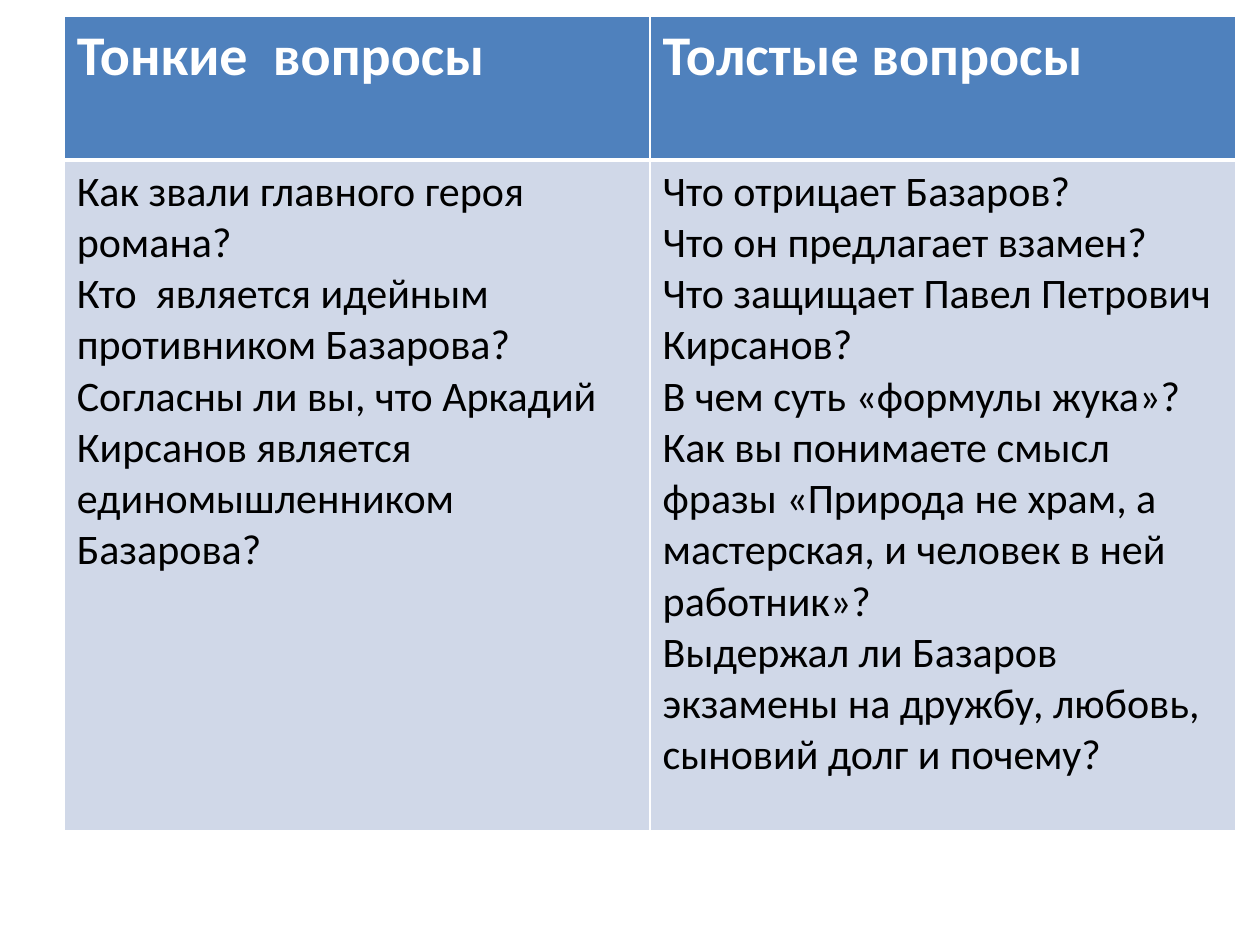
from lxml.etree import SubElement as Sub
from pptx import Presentation
from pptx.dml.color import RGBColor as Rgb
from pptx.oxml.ns import qn
from pptx.util import Inches, Pt

HEADS = ["Тонкие  вопросы", "Толстые вопросы"]
THIN = [
    "Как звали главного героя романа?",
    "Кто  является идейным противником Базарова?",
    "Согласны ли вы, что Аркадий Кирсанов является единомышленником Базарова?",
]
THICK = [
    "Что отрицает Базаров?",
    "Что он предлагает взамен?",
    "Что защищает Павел Петрович Кирсанов?",
    "В чем суть «формулы жука»?",
    "Как вы понимаете смысл фразы «Природа не храм, а мастерская, и человек в ней работник»?",
    "Выдержал ли Базаров экзамены на дружбу, любовь, сыновий долг и почему?",
]


def color(code):
    return Rgb.from_string(code)


class Deck:
    font = "Calibri"
    white = "FFFFFF"
    head = dict(size=32, ink="FFFFFF", bold=True, fill="4F81BD", edges=dict(L=1, R=1, T=1, B=3))
    body = dict(size=24, ink="000000", bold=False, fill="D0D8E8", edges=dict(L=1, R=1, T=3, B=1))

    def __init__(self, slide):
        self.slide = slide

    def table(self, left, top, widths, heights, rows):
        shape = self.slide.shapes.add_table(
            len(heights), len(widths), Inches(left), Inches(top),
            Inches(sum(widths)), Inches(sum(heights)))
        grid = shape.table
        for col, width in zip(grid.columns, widths):
            col.width = Inches(width)
        for row, height, texts, look in zip(grid.rows, heights, rows, [self.head, self.body]):
            row.height = Inches(height)
            for cell, lines in zip(row.cells, texts):
                self.cell(cell, lines, look)

    def cell(self, cell, lines, look):
        self.edges(cell, look["edges"])
        cell.fill.solid()
        cell.fill.fore_color.rgb = color(look["fill"])
        frame = cell.text_frame
        for i, line in enumerate(lines):
            para = frame.add_paragraph() if i else frame.paragraphs[0]
            run = para.add_run()
            run.text = line
            font = run.font
            font.name = self.font
            font.size = Pt(look["size"])
            font.bold = look["bold"]
            font.color.rgb = color(look["ink"])

    def edges(self, cell, sizes):
        props = cell._tc.get_or_add_tcPr()
        for side, size in sizes.items():
            line = Sub(props, qn(f"a:ln{side}"), w=str(Pt(size)))
            fill = Sub(line, qn("a:solidFill"))
            Sub(fill, qn("a:srgbClr"), val=self.white)


def main():
    show = Presentation()
    show.slide_width, show.slide_height = Inches(10), Inches(7.5)
    deck = Deck(show.slides.add_slide(show.slide_layouts[6]))
    heads = [[head] for head in HEADS]
    deck.table(0.51, 0.13, [4.65] * 2, [1.14, 5.32], [heads, [THIN, THICK]])
    show.save("out.pptx")


if __name__ == "__main__":
    main()
